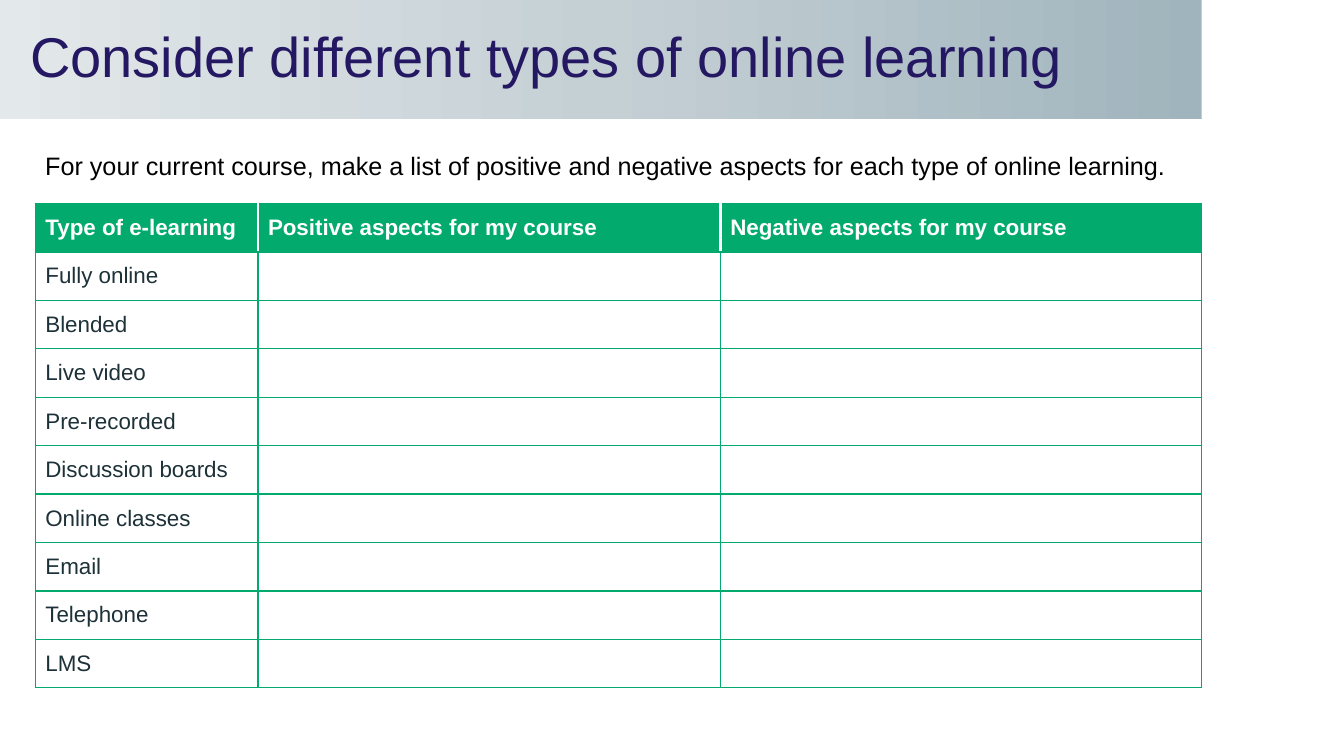
from copy import deepcopy

from lxml import etree
from pptx import Presentation
from pptx import util as u
from pptx.dml.color import RGBColor
from pptx.enum import text
from pptx.oxml import ns

FONT = "Arial"
GREEN = RGBColor(0x02, 0xAA, 0x6D)
WHITE = RGBColor(0xFF, 0xFF, 0xFF)
BLACK = RGBColor(0x00, 0x00, 0x00)
INK = RGBColor(0x1D, 0x31, 0x38)
NAVY = RGBColor(0x25, 0x18, 0x63)
BANNER = [RGBColor(0xA0, 0xB4, 0xBD), RGBColor(0xC5, 0xD0, 0xD5), RGBColor(0xE3, 0xE8, 0xEA)]

HEADINGS = ["Type of e-learning", "Positive aspects for my course", "Negative aspects for my course"]
TYPES = ["Fully online", "Blended", "Live video", "Pre-recorded", "Discussion boards",
         "Online classes", "Email", "Telephone", "LMS"]
LEFT, WIDTH = 0.89, 29.39
COLUMNS = [5.61, 11.65, 12.13]
ROW_HEIGHT = 1.22


class SlideBuilder:
    def __init__(self, deck):
        self.page = deck.slides.add_slide(deck.slide_layouts[5])

    def add_span(self, para, words, size, color, bold=False):
        span = para.add_run()
        span.text = words
        span.font.name, span.font.size = FONT, u.Pt(size)
        span.font.color.rgb, span.font.bold = color, bold

    def place(self, box, left, top, width, height):
        box.left, box.top = u.Cm(left), u.Cm(top)
        box.width, box.height = u.Cm(width), u.Cm(height)

    def title(self, words, width, height):
        box = self.page.shapes.title
        self.place(box, 0, 0, width, height)
        # Three-step gradient: the middle stop is cloned from the first
        box.fill.gradient()
        box.fill.gradient_angle = 180
        first = box.element.find(".//" + ns.qn("a:gs"))
        first.addnext(deepcopy(first))
        for index, (stop, color) in enumerate(zip(box.fill.gradient_stops, BANNER)):
            stop.position = index / 2
            stop.color.rgb = color
        frame = box.text_frame
        frame.word_wrap = True
        frame.auto_size = text.MSO_AUTO_SIZE.NONE
        frame.vertical_anchor = text.MSO_ANCHOR.MIDDLE
        frame.margin_left = u.Cm(0.76)
        para = frame.paragraphs[0]
        para.alignment = text.PP_ALIGN.LEFT
        para.line_spacing = 0.9
        self.add_span(para, words, 40, NAVY)

    def text_box(self, words, left, top, width, height):
        box = self.page.shapes.add_textbox(u.Cm(left), u.Cm(top), u.Cm(width), u.Cm(height))
        box.text_frame.word_wrap = True
        self.add_span(box.text_frame.paragraphs[0], words, 18, BLACK)

    def border(self, cell, side, color, points):
        line = etree.SubElement(cell._tc.get_or_add_tcPr(), ns.qn("a:ln" + side), w=str(u.Pt(points)))
        fill = etree.SubElement(line, ns.qn("a:solidFill"))
        etree.SubElement(fill, ns.qn("a:srgbClr"), val=str(color))

    def table(self, rows, left, top):
        count = len(COLUMNS)
        frame = self.page.shapes.add_table(len(rows), count, u.Cm(left), u.Cm(top),
                                           u.Cm(WIDTH), u.Cm(ROW_HEIGHT * len(rows)))
        grid = frame.table
        grid.horz_banding = False
        for column, width in zip(grid.columns, COLUMNS):
            column.width = u.Cm(width)
        for r, words in enumerate(rows):
            grid.rows[r].height = u.Cm(ROW_HEIGHT)
            for c in range(count):
                self.cell(grid.cell(r, c), words[c], r, c)

    def cell(self, cell, words, row, column):
        header = row == 0
        white_left = header and column > 0
        white_right = header and column < len(COLUMNS) - 1
        self.border(cell, "L", *((WHITE, 2.25) if white_left else (GREEN, 1)))
        self.border(cell, "R", *((WHITE, 2.25) if white_right else (GREEN, 1)))
        self.border(cell, "T", GREEN, 2 if row == 1 else 1)
        self.border(cell, "B", GREEN, 2 if header else 1)
        if header:
            cell.fill.solid()
            cell.fill.fore_color.rgb = GREEN
        else:
            cell.fill.background()
        cell.vertical_anchor = text.MSO_ANCHOR.MIDDLE
        if words:
            self.add_span(cell.text_frame.paragraphs[0], words, 16, WHITE if header else INK, header)


def main():
    deck = Presentation()
    deck.slide_width, deck.slide_height = u.Cm(33.87), u.Cm(19.05)
    builder = SlideBuilder(deck)

    # Title banner and instruction
    builder.title("Consider different types of online learning", 30.28, 3)
    builder.text_box("For your current course, make a list of positive and negative aspects "
                     "for each type of online learning.", LEFT, 3.66, WIDTH, 1.47)

    # Worksheet table
    builder.table([HEADINGS] + [[kind, "", ""] for kind in TYPES], LEFT, 5.13)

    deck.save("out.pptx")


if __name__ == "__main__":
    main()
